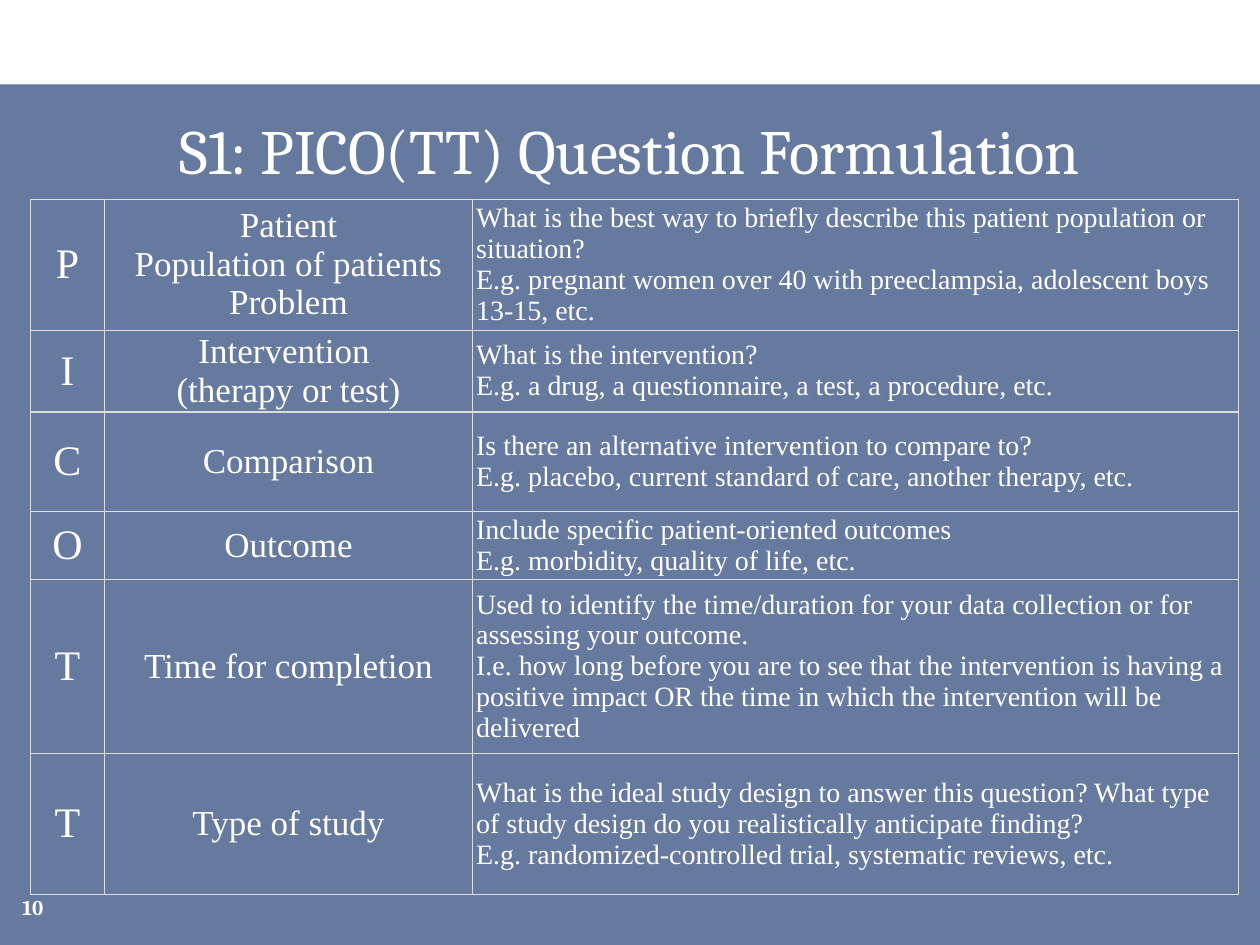
from dataclasses import dataclass

from lxml.etree import SubElement
from pptx import Presentation
from pptx.dml.color import RGBColor
from pptx.enum.shapes import MSO_SHAPE
from pptx.enum.text import MSO_ANCHOR, PP_ALIGN
from pptx.oxml.ns import qn
from pptx.util import Inches, Pt


@dataclass(frozen=True)
class Theme:
    panel: str = "002060"
    panel_opacity: int = 60
    text: str = "FFFFFF"
    border: str = "DDDDDD"
    border_width: float = 0.75
    heading_font: str = "Cambria"
    table_font: str = "Times New Roman"
    title_size: int = 36
    number_size: int = 12
    column_sizes: tuple = (24, 20, 16)
    table_line_pitch: float = 1.1


THEME = Theme()
TITLE = "S1: PICO(TT) Question Formulation"
SLIDE_NUMBER = "10"

# Row height, then the paragraphs of each cell
ROWS = [
    (1.04, ["P"], ["Patient", "Population of patients", "Problem"], [
        "What is the best way to briefly describe this patient population or situation?",
        "E.g. pregnant women over 40 with preeclampsia, adolescent boys 13-15, etc.",
    ]),
    (0.65, ["I"], ["Intervention ", "(therapy or test)"], [
        "What is the intervention?",
        "E.g. a drug, a questionnaire, a test, a procedure, etc.",
    ]),
    (0.79, ["C"], ["Comparison"], [
        "Is there an alternative intervention to compare to?",
        "E.g. placebo, current standard of care, another therapy, etc.",
    ]),
    (0.54, ["O"], ["Outcome"], [
        "Include specific patient-oriented outcomes",
        "E.g. morbidity, quality of life, etc.",
    ]),
    (1.38, ["T"], ["Time for completion"], [
        "Used to identify the time/duration for your data collection or for "
        "assessing your outcome.",
        "I.e. how long before you are to see that the intervention is having a "
        "positive impact OR the time in which the intervention will be delivered",
    ]),
    (1.12, ["T"], ["Type of study"], [
        "What is the ideal study design to answer this question? What type of "
        "study design do you realistically anticipate finding?",
        "E.g. randomized-controlled trial, systematic reviews, etc.",
    ]),
]
COLUMN_WIDTHS = (0.59, 2.92, 6.08)
COLUMN_ALIGNMENTS = (PP_ALIGN.CENTER, PP_ALIGN.CENTER, PP_ALIGN.LEFT)
TABLE_LEFT, TABLE_TOP = 0.24, 1.58


def write_paragraphs(text_frame, lines, font_name, size, alignment,
                     bold=False, line_spacing=None):
    for index, line in enumerate(lines):
        paragraph = text_frame.paragraphs[0] if index == 0 else text_frame.add_paragraph()
        paragraph.alignment = alignment
        paragraph.line_spacing = line_spacing
        run = paragraph.add_run()
        run.text = line
        run.font.name = font_name
        run.font.size = Pt(size)
        run.font.bold = bold
        run.font.color.rgb = RGBColor.from_string(THEME.text)


def add_panel(slide):
    panel = slide.shapes.add_shape(
        MSO_SHAPE.RECTANGLE, Inches(0), Inches(0.67), Inches(10), Inches(6.83))
    panel.shadow.inherit = False
    panel.line.fill.background()
    panel.fill.solid()
    panel.fill.fore_color.rgb = RGBColor.from_string(THEME.panel)
    color = panel.fill._xPr.find(qn("a:solidFill")).find(qn("a:srgbClr"))
    SubElement(color, qn("a:alpha"), val=str(THEME.panel_opacity * 1000))


def add_text(slide, box, text, size, alignment, bold=False):
    text_frame = slide.shapes.add_textbox(*map(Inches, box)).text_frame
    text_frame.word_wrap = True
    text_frame.vertical_anchor = MSO_ANCHOR.MIDDLE
    write_paragraphs(text_frame, [text], THEME.heading_font, size, alignment, bold)


def add_borders(cell):
    properties = cell._tc.get_or_add_tcPr()
    for side in ("lnL", "lnR", "lnT", "lnB"):
        line = SubElement(properties, qn(f"a:{side}"), w=str(Pt(THEME.border_width)))
        fill = SubElement(line, qn("a:solidFill"))
        SubElement(fill, qn("a:srgbClr"), val=THEME.border)


def format_cell(cell):
    add_borders(cell)
    cell.fill.background()
    cell.vertical_anchor = MSO_ANCHOR.MIDDLE
    cell.margin_left = cell.margin_right = Inches(0.03)
    cell.margin_top = cell.margin_bottom = Inches(0.01)


def add_question_table(slide):
    height = sum(row[0] for row in ROWS)
    table = slide.shapes.add_table(
        len(ROWS), len(COLUMN_WIDTHS), Inches(TABLE_LEFT), Inches(TABLE_TOP),
        Inches(sum(COLUMN_WIDTHS)), Inches(height)).table
    table.first_row = table.horz_banding = False
    for column, width in zip(table.columns, COLUMN_WIDTHS):
        column.width = Inches(width)
    for row, (row_height, *contents) in zip(table.rows, ROWS):
        row.height = Inches(row_height)
        for cell, lines, size, alignment in zip(
                row.cells, contents, THEME.column_sizes, COLUMN_ALIGNMENTS):
            format_cell(cell)
            write_paragraphs(cell.text_frame, lines, THEME.table_font, size, alignment,
                             line_spacing=Pt(size * THEME.table_line_pitch))


def main():
    presentation = Presentation()
    presentation.slide_width, presentation.slide_height = Inches(10), Inches(7.5)
    slide = presentation.slides.add_slide(presentation.slide_layouts[6])
    add_panel(slide)
    add_text(slide, (0.25, 0.77, 9.5, 0.83), TITLE, THEME.title_size, PP_ALIGN.CENTER)
    add_question_table(slide)
    add_text(slide, (0.08, 7, 2.25, 0.4), SLIDE_NUMBER, THEME.number_size,
             PP_ALIGN.LEFT, bold=True)
    presentation.save("out.pptx")


if __name__ == "__main__":
    main()
